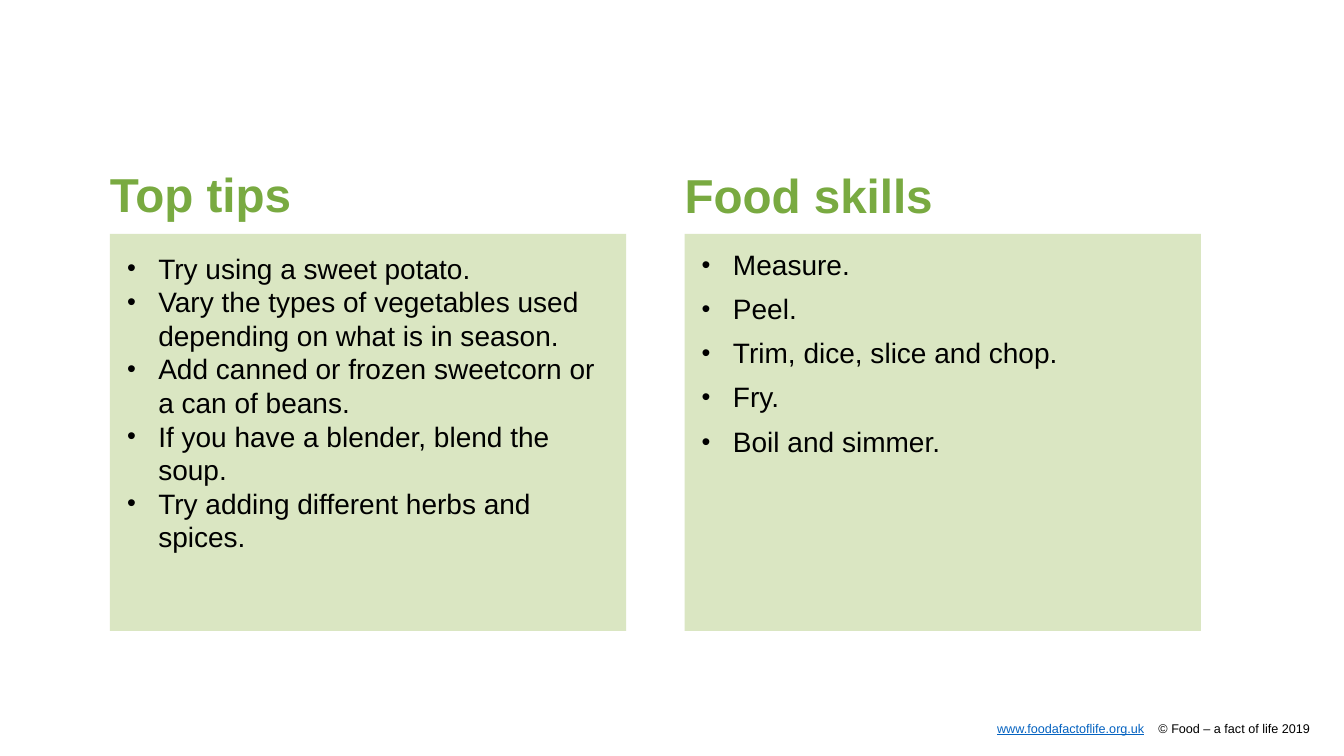
from dataclasses import dataclass

from lxml import etree
from pptx import Presentation
from pptx.dml.color import RGBColor
from pptx.enum.shapes import MSO_SHAPE
from pptx.enum.text import MSO_ANCHOR, MSO_AUTO_SIZE, PP_ALIGN
from pptx.oxml.ns import qn
from pptx.util import Inches, Pt

RECT = MSO_SHAPE.RECTANGLE
TOP = MSO_ANCHOR.TOP
NO_FIT = MSO_AUTO_SIZE.NONE
LEFT = PP_ALIGN.LEFT

GREEN = RGBColor(0x79, 0xAA, 0x41)
PALE = RGBColor(0xDA, 0xE6, 0xC2)
BLACK = RGBColor(0, 0, 0)
BLUE = RGBColor(0x05, 0x63, 0xC1)
FONT = "Arial"
INSET = 0.17


@dataclass
class Panel:
    left: float
    head_top: float
    head: str
    items: list[str]
    pitch: float
    gap: float


PANELS = [
    Panel(1.09, 1.7, "Top tips", [
        "Try using a sweet potato.",
        "Vary the types of vegetables used depending on what is in season.",
        "Add canned or frozen sweetcorn or a can of beans.",
        "If you have a blender, blend the soup.",
        "Try adding different herbs and spices.",
    ], 1.0, 0),
    Panel(6.79, 1.71, "Food skills", [
        "Measure.",
        "Peel.",
        "Trim, dice, slice and chop.",
        "Fry.",
        "Boil and simmer.",
    ], 0.9, 10),
]


def place(box, left: float, top: float, width: float, height: float):
    """Move a text shape, clear its insets and return its text frame."""
    box.left, box.top = Inches(left), Inches(top)
    box.width, box.height = Inches(width), Inches(height)
    frame = box.text_frame
    frame.margin_left = frame.margin_right = 0
    frame.margin_top = frame.margin_bottom = 0
    frame.word_wrap = True
    frame.auto_size = NO_FIT
    frame.vertical_anchor = TOP
    return frame


def style(para, size: float, color: RGBColor, bold: bool = False) -> None:
    para.alignment = LEFT
    font = para.font
    font.name, font.size, font.bold = FONT, Pt(size), bold
    font.color.rgb = color


def add_bullet(para) -> None:
    props = para._p.get_or_add_pPr()
    props.set("marL", str(Inches(0.31)))
    props.set("indent", str(-Inches(0.31)))
    etree.SubElement(props, qn("a:buSzPct"), val="90000")
    etree.SubElement(props, qn("a:buFont"), typeface=FONT)
    etree.SubElement(props, qn("a:buChar"), char="•")


def draw_panel(slide, panel: Panel, head, body) -> None:
    # Pale card behind the text
    card = slide.shapes.add_shape(RECT, Inches(panel.left), Inches(2.32),
                                  Inches(5.12), Inches(3.94))
    card.shadow.inherit = False
    card.fill.solid()
    card.fill.fore_color.rgb = PALE
    card.line.fill.background()
    head.element.addprevious(card.element)

    # Heading
    frame = place(head, panel.left, panel.head_top, 10.63, 0.79)
    frame.text = panel.head
    para = frame.paragraphs[0]
    para.line_spacing = 0.9
    style(para, 34, GREEN, True)

    # Bullet list
    frame = place(body, panel.left + INSET, 2.49, 4.78, 3.94)
    frame.text = "\n".join(panel.items)
    for i, para in enumerate(frame.paragraphs):
        add_bullet(para)
        para.line_spacing = panel.pitch
        para.space_before = Pt(panel.gap if i else 0)
        style(para, 20, BLACK)


def draw_footer(slide) -> None:
    box = slide.shapes.add_textbox(0, 0, 0, 0)
    para = place(box, 1.26, 7.15, 11.78, 0.15).paragraphs[0]
    tabs = etree.SubElement(para._p.get_or_add_pPr(), qn("a:tabLst"))
    for stop in (8.63, 10.23):
        etree.SubElement(tabs, qn("a:tab"), pos=str(Inches(stop)), algn="l")
    style(para, 9, BLACK)
    for text in ("\t", "www.foodafactoflife.org.uk",
                 "\t© Food – a fact of life 2019"):
        run = para.add_run()
        run.text = text
        run.font.name, run.font.size = FONT, Pt(9)
        web = text.startswith("www")
        run.font.underline = web
        run.font.color.rgb = BLUE if web else BLACK


def main() -> None:
    deck = Presentation()
    deck.slide_width, deck.slide_height = Inches(13.33), Inches(7.5)
    slide = deck.slides.add_slide(deck.slide_layouts[0])
    shapes = slide.shapes
    tips, skills = PANELS
    draw_panel(slide, tips, shapes.title, slide.placeholders[1])
    head, body = (shapes.add_textbox(0, 0, 0, 0) for _ in range(2))
    draw_panel(slide, skills, head, body)
    draw_footer(slide)
    deck.save("out.pptx")


if __name__ == "__main__":
    main()
